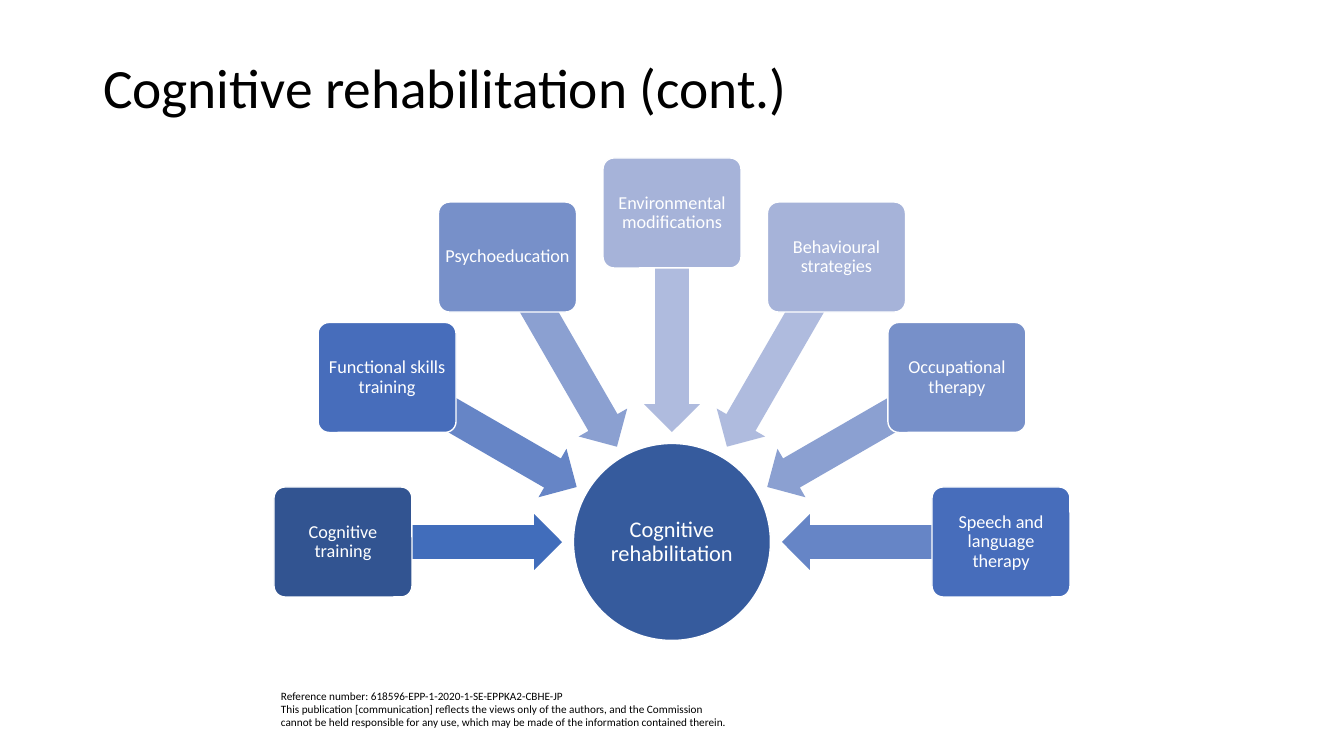
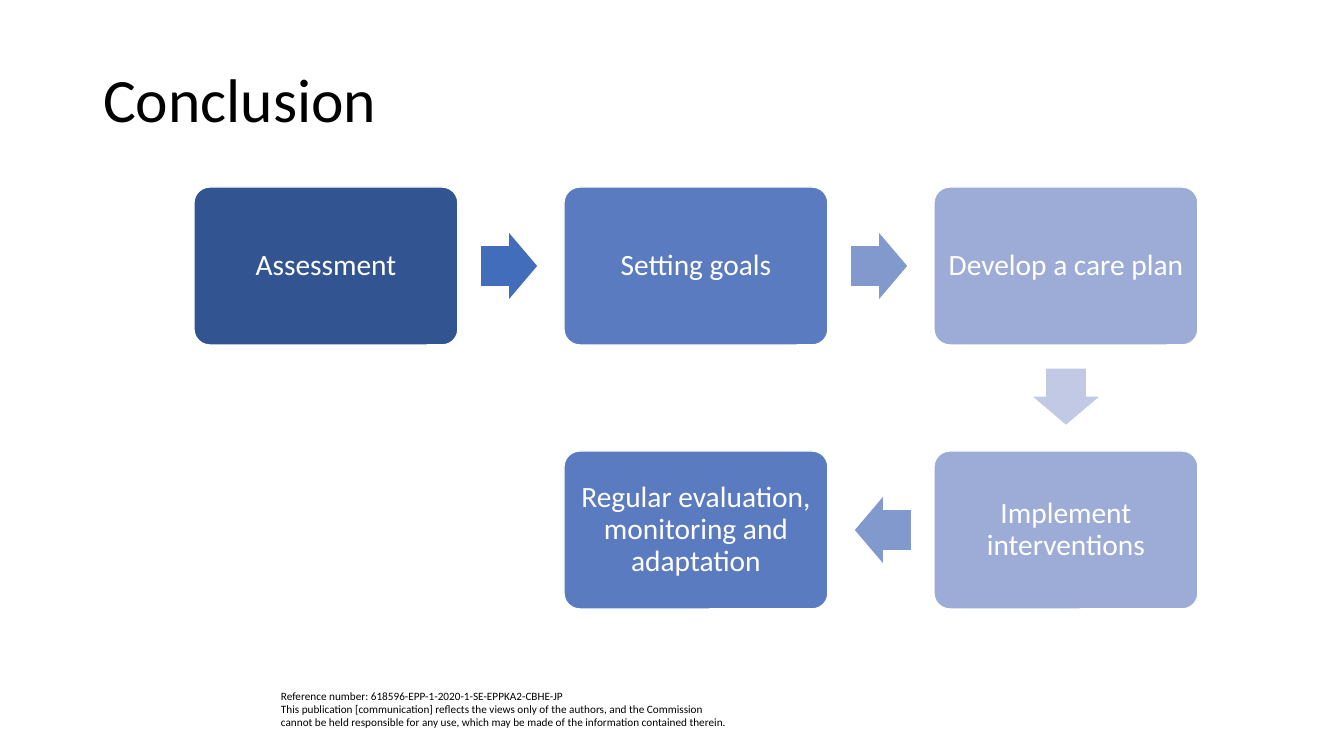
from math import atan2, cos, degrees, radians, sin

from pptx import Presentation
from pptx.dml.color import RGBColor
from pptx.enum.shapes import MSO_SHAPE as Kind
from pptx.enum.text import MSO_ANCHOR as Anchor, PP_ALIGN as Align
from pptx.util import Emu, Pt

SCALE = 914400 / 100.8
FONT = "Calibri"
WHITE, BLACK = "FFFFFF", "000000"
NAVY, BLUE, HUB = "325491", "416DBB", "365B9D"
FOOTER = (
    "Reference number: 618596-EPP-1-2020-1-SE-EPPKA2-CBHE-JP\v"
    "This publication [communication] reflects the views only of the authors, "
    "and the Commission cannot be held responsible for any use, "
    "which may be made of the information contained therein."
)


def px(*nums):
    return [Emu(round(n * SCALE)) for n in nums]


def draw(slide, kind, mid, size, fill, adj=(), turn=0, text="", pt=0, inset=0):
    """Add a filled shape centred on mid; one with text gets a white outline."""
    (x, y), (w, h) = mid, size
    shape = slide.shapes.add_shape(kind, *px(x - w / 2, y - h / 2, w, h))
    shape.shadow.inherit = False
    shape.rotation = turn
    shape.fill.solid()
    shape.fill.fore_color.rgb = RGBColor.from_string(fill)
    for i, val in enumerate(adj):
        shape.adjustments[i] = val
    if not text:
        shape.line.fill.background()
        return
    shape.line.color.rgb = RGBColor.from_string(WHITE)
    shape.line.width = Pt(1)
    frame = shape.text_frame
    frame.text = text
    frame.word_wrap = True
    frame.vertical_anchor = Anchor.MIDDLE
    pad, = px(inset)
    frame.margin_left = frame.margin_right = pad
    frame.margin_top = frame.margin_bottom = pad
    para = frame.paragraphs[0]
    para.alignment = Align.CENTER
    para.line_spacing = 0.9
    font = para.runs[0].font
    font.name, font.size = FONT, Pt(pt)
    font.color.rgb = RGBColor.from_string(WHITE)


deck = Presentation()
deck.slide_width, deck.slide_height = px(1344, 756)
layout = deck.slide_layouts[5]

# Titles
slides = []
for text, top, pt in [("Cognitive rehabilitation (cont.)", 42, 39.6),
                      ("Conclusion", 54, 44)]:
    slide = deck.slides.add_slide(layout)
    title = slide.shapes.title
    title.left, title.top, title.width, title.height = px(93, top, 1159, 97)
    frame = title.text_frame
    frame.text = text
    frame.vertical_anchor = Anchor.MIDDLE
    para = frame.paragraphs[0]
    para.alignment = Align.LEFT
    para.line_spacing = 0.9
    font = para.runs[0].font
    font.name, font.size = FONT, Pt(pt)
    font.color.rgb = RGBColor.from_string(BLACK)
    slides.append(slide)
wheel, flow = slides

# Footer, moved to the layout so that every slide shows it
note = wheel.shapes.add_textbox(*px(271, 684, 468, 50))
note.text_frame.text = FOOTER
note.text_frame.word_wrap = True
for run in note.text_frame.paragraphs[0].runs:
    run.font.name, run.font.size = FONT, Pt(8)
    run.font.color.rgb = RGBColor.from_string(BLACK)
layout.shapes.element.append(note.element)

# Therapies on a half circle, each pointing at the hub
cx, cy = 672, 542
draw(wheel, Kind.OVAL, (cx, cy), (197, 197), HUB,
     text="Cognitive rehabilitation", pt=16, inset=1)
therapies = [
    ("Cognitive training", NAVY, BLUE),
    ("Functional skills training", "476DBB", "6685C6"),
    ("Psychoeducation", "7790C9", "8BA0D1"),
    ("Environmental modifications", "A6B3D9", "AFBBDE"),
    ("Behavioural strategies", "A6B3D9", "AFBBDE"),
    ("Occupational therapy", "7790C9", "8BA0D1"),
    ("Speech and language therapy", "476DBB", "6685C6"),
]
for i, (text, fill, tint) in enumerate(therapies):
    turn = 180 + 30 * i
    dx, dy = cos(radians(turn)), sin(radians(turn))
    draw(wheel, Kind.LEFT_ARROW, (cx + 219 * dx, cy + 219 * dy), (218, 56),
         tint, (0.6, 0.5), turn % 360)
    draw(wheel, Kind.ROUNDED_RECTANGLE, (cx + 329 * dx, cy + 329 * dy),
         (138, 110), fill, (0.1,), text=text, pt=13, inset=3)

# Steps on a grid, each with an arrow to the next
steps = [
    ("Assessment", 0, 0, NAVY, BLUE),
    ("Setting goals", 1, 0, "5B7BC0", "8299CE"),
    ("Develop a care plan", 2, 0, "9DACD6", "C1C9E4"),
    ("Implement interventions", 2, 1, "9DACD6", "8299CE"),
    ("Regular evaluation, monitoring and adaptation", 1, 1, "5B7BC0", None),
]
spots = [(326 + 370 * col, 266 + 264 * row) for _, col, row, _, _ in steps]
for i, (text, col, row, fill, tint) in enumerate(steps):
    x, y = spots[i]
    draw(flow, Kind.ROUNDED_RECTANGLE, (x, y), (264, 158), fill, (0.1,),
         text=text, pt=21, inset=9)
    if tint:
        dx, dy = spots[i + 1][0] - x, spots[i + 1][1] - y
        draw(flow, Kind.RIGHT_ARROW, (x + 0.495 * dx, y + 0.495 * dy), (56, 66),
             tint, (0.6, 0.5), degrees(atan2(dy, dx)))

deck.save("out.pptx")
